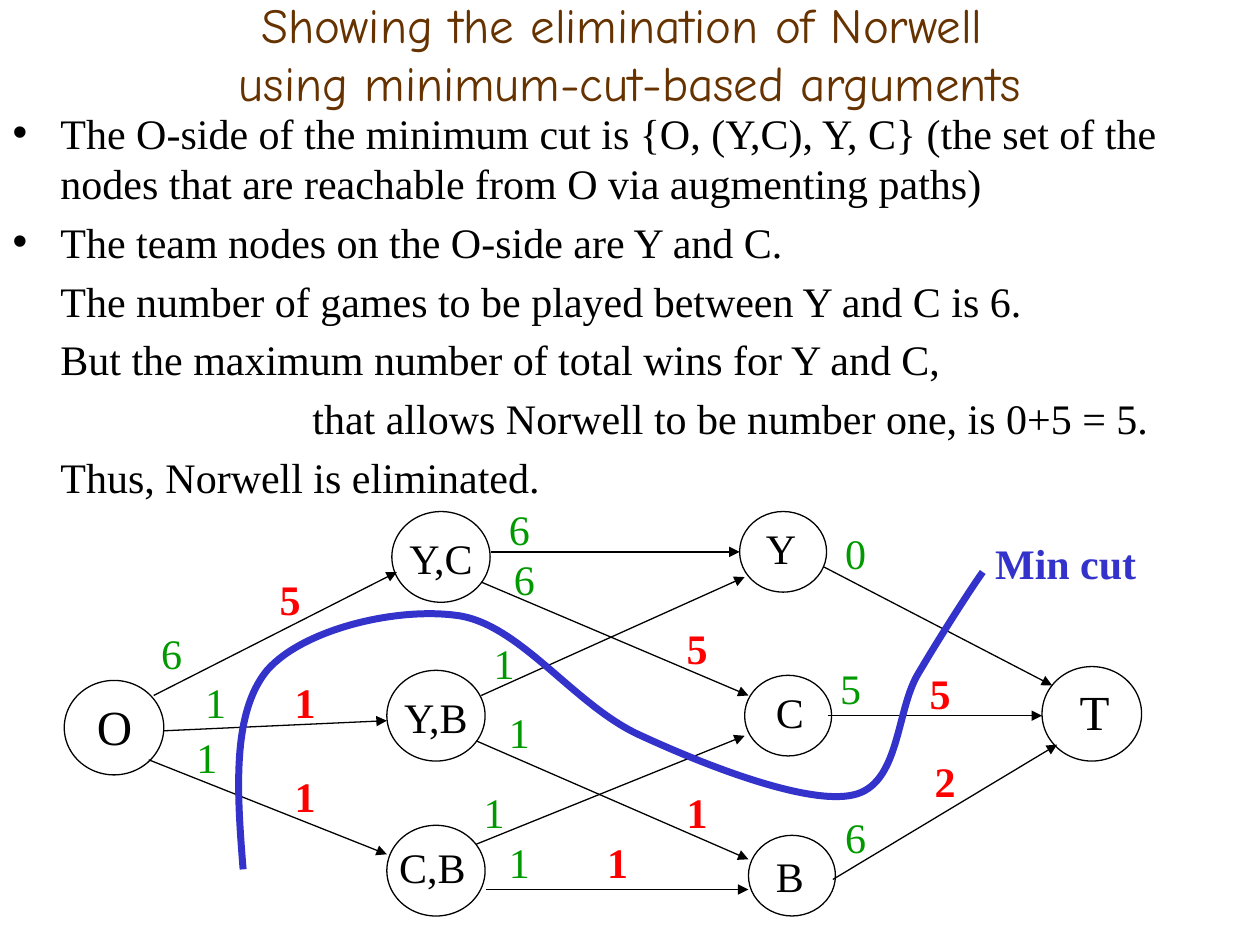
from lxml import etree
from pptx import Presentation
from pptx.dml.color import RGBColor
from pptx.enum import shapes, text
from pptx.oxml import ns
from pptx.util import Inches, Pt

BLACK = RGBColor(0x00, 0x00, 0x00)
WHITE = RGBColor(0xFF, 0xFF, 0xFF)
BROWN = RGBColor(0x66, 0x33, 0x00)
GREEN = RGBColor(0x00, 0x99, 0x00)
RED = RGBColor(0xFF, 0x00, 0x00)
BLUE = RGBColor(0x33, 0x33, 0xCC)
BODY_FONT = "Times New Roman"
TITLE_FONT = "Comic Neue"

TITLE = "Showing the elimination of Norwell \vusing minimum-cut-based arguments"
BODY = [
    (True, "The O-side of the minimum cut is {O, (Y,C), Y, C} "
           "(the set of the nodes that are reachable from O via augmenting paths)"),
    (True, "The team nodes on the O-side are Y and C."),
    (False, "\tThe number of games to be played between Y and C is 6."),
    (False, "\tBut the maximum number of total wins for Y and C,"),
    (False, "\t\t\tthat allows Norwell to be number one, is 0+5 = 5."),
    (False, "\tThus, Norwell is eliminated."),
]

TERMINAL = (0.79, 0.75, 0.47, 0.57, 28, None)
GAME = (0.78, 0.72, 0.75, 0.5, 24, WHITE)
TEAM = (0.69, 0.64, 0.43, 0.5, 24, WHITE)
NODES = [
    ("C,B", GAME, (3.07, 6.55), (3.07, 6.63)),
    ("Y,B", GAME, (3.07, 5.32), (3.11, 5.44)),
    ("Y,C", GAME, (3.11, 4.06), (3.15, 4.18)),
    ("Y", TEAM, (5.87, 4.06), (5.98, 4.1)),
    ("C", TEAM, (5.91, 5.36), (6.06, 5.4)),
    ("B", TEAM, (5.94, 6.63), (6.06, 6.7)),
    ("O", TERMINAL, (0.51, 5.4), (0.67, 5.48)),
    ("T", TERMINAL, (8.27, 5.29), (8.47, 5.36)),
]
EDGES = [
    ((1.22, 5.52), (3.15, 4.54)), ((1.3, 5.8), (3.07, 5.72)),
    ((1.18, 6.03), (3.07, 6.78)), ((3.9, 4.38), (5.87, 4.38)),
    ((3.82, 4.62), (5.94, 5.52)), ((3.82, 5.52), (5.91, 4.58)),
    ((3.78, 5.88), (5.94, 6.82)), ((3.78, 6.7), (5.91, 5.84)),
    ((3.86, 7.06), (5.94, 7.06)), ((6.54, 4.5), (8.35, 5.44)),
    ((6.57, 5.68), (8.27, 5.68)), ((6.61, 6.98), (8.39, 5.91)),
]
CAPACITIES = [
    ("1", 3.94, 5.56), ("1", 3.74, 6.19), ("6", 6.61, 6.39), ("6", 3.98, 4.34),
    ("1", 1.46, 5.76), ("6", 3.94, 3.95), ("1", 3.82, 5.01), ("5", 6.57, 5.21),
    ("1", 3.94, 6.59), ("0", 6.61, 4.14), ("1", 1.53, 5.32), ("6", 1.18, 4.93),
]
FLOWS = [
    ("5", 2.12, 4.5), ("5", 5.35, 4.89), ("1", 2.24, 5.32), ("5", 7.28, 5.25),
    ("1", 2.24, 6.07), ("1", 5.35, 6.19), ("1", 4.72, 6.59), ("2", 7.32, 5.95),
]
CUT_START = (1.93, 6.9)
CUT_CURVES = [
    (1.88, 6.28), (1.84, 5.66), (2.12, 5.32),
    (2.41, 4.99), (3.17, 4.81), (3.66, 4.89),
    (4.15, 4.98), (4.57, 5.61), (5.09, 5.84),
    (5.61, 6.08), (6.41, 6.39), (6.77, 6.31),
    (7.14, 6.23), (7.11, 5.66), (7.28, 5.36),
    (7.45, 5.07), (7.7, 4.68), (7.8, 4.54),
]


def place(shape, left, top, width, height):
    shape.left, shape.top = Inches(left), Inches(top)
    shape.width, shape.height = Inches(width), Inches(height)


def set_font(paragraph, size, color, name=BODY_FONT, bold=False):
    font = paragraph.font
    font.size, font.name, font.bold = Pt(size), name, bold
    font.color.rgb = color


def fill_title(title):
    place(title, 0, 0, 10, 0.84)
    frame = title.text_frame
    frame.text = TITLE
    frame.auto_size = text.MSO_AUTO_SIZE.NONE
    frame.vertical_anchor = text.MSO_ANCHOR.MIDDLE
    paragraph = frame.paragraphs[0]
    paragraph.alignment = text.PP_ALIGN.CENTER
    set_font(paragraph, 28, BROWN, TITLE_FONT)


def fill_body(body):
    place(body, 0, 0.8, 10, 6.7)
    frame = body.text_frame
    frame.text = "\n".join(line for _, line in BODY)
    frame.auto_size = text.MSO_AUTO_SIZE.NONE
    for paragraph, (bulleted, _) in zip(frame.paragraphs, BODY):
        set_font(paragraph, 24, BLACK)
        properties = paragraph._p.get_or_add_pPr()
        properties.set("marL", str(Inches(0.38)))
        properties.set("indent", str(Inches(-0.38)))
        properties.set("defTabSz", str(Inches(1)))
        if bulleted:
            etree.SubElement(properties, ns.qn("a:buChar"), char="•")
        else:
            etree.SubElement(properties, ns.qn("a:buNone"))
        properties.append(properties.find(ns.qn("a:defRPr")))


def add_label(slide, words, left, top, color, width=0.39, height=0.5, size=24, bold=False):
    label = slide.shapes.add_textbox(Inches(left), Inches(top), Inches(width), Inches(height))
    frame = label.text_frame
    frame.word_wrap = True
    frame.auto_size = text.MSO_AUTO_SIZE.SHAPE_TO_FIT_TEXT
    frame.text = words
    set_font(frame.paragraphs[0], size, color, bold=bold)


def add_node(slide, name, style, corner, label_corner):
    width, height, label_width, label_height, size, fill = style
    node = slide.shapes.add_shape(shapes.MSO_SHAPE.OVAL, *map(Inches, (*corner, width, height)))
    node.shadow.inherit = False
    if fill is None:
        node.fill.background()
    else:
        node.fill.solid()
        node.fill.fore_color.rgb = fill
    node.line.color.rgb = BLACK
    node.line.width = Pt(0.75)
    add_label(slide, name, *label_corner, BLACK, label_width, label_height, size)


def add_edge(slide, start, end):
    edge = slide.shapes.add_connector(
        shapes.MSO_CONNECTOR.STRAIGHT, *map(Inches, (*start, *end)))
    edge.line.color.rgb = BLACK
    edge.line.width = Pt(0.75)
    etree.SubElement(edge.line._get_or_add_ln(), ns.qn("a:tailEnd"), type="triangle")
    etree.SubElement(edge._element.spPr, ns.qn("a:effectLst"))


def add_cut(slide):
    builder = slide.shapes.build_freeform(*map(Inches, CUT_START), scale=1.0)
    builder.add_line_segments([tuple(map(Inches, point)) for point in CUT_CURVES], close=False)
    cut = builder.convert_to_shape()
    cut.shadow.inherit = False
    cut.fill.background()
    cut.line.color.rgb = BLUE
    cut.line.width = Pt(4)
    segments = list(cut._element.iter(ns.qn("a:lnTo")))
    outline = segments[0].getparent()
    for first in range(0, len(segments), 3):
        curve = etree.SubElement(outline, ns.qn("a:cubicBezTo"))
        for segment in segments[first:first + 3]:
            curve.append(segment[0])
            outline.remove(segment)


def main():
    presentation = Presentation()
    presentation.slide_width, presentation.slide_height = Inches(10), Inches(7.5)
    slide = presentation.slides.add_slide(presentation.slide_layouts.get_by_name("Title and Content"))
    fill_title(slide.shapes.title)
    fill_body(slide.placeholders[1])
    for capacity in CAPACITIES:
        add_label(slide, *capacity, GREEN)
    for node in NODES:
        add_node(slide, *node)
    for edge in EDGES:
        add_edge(slide, *edge)
    for flow in FLOWS:
        add_label(slide, *flow, RED, width=0.32, bold=True)
    add_cut(slide)
    add_label(slide, "Min cut", 7.8, 4.22, BLUE, width=1.34, bold=True)
    presentation.save("out.pptx")


if __name__ == "__main__":
    main()
